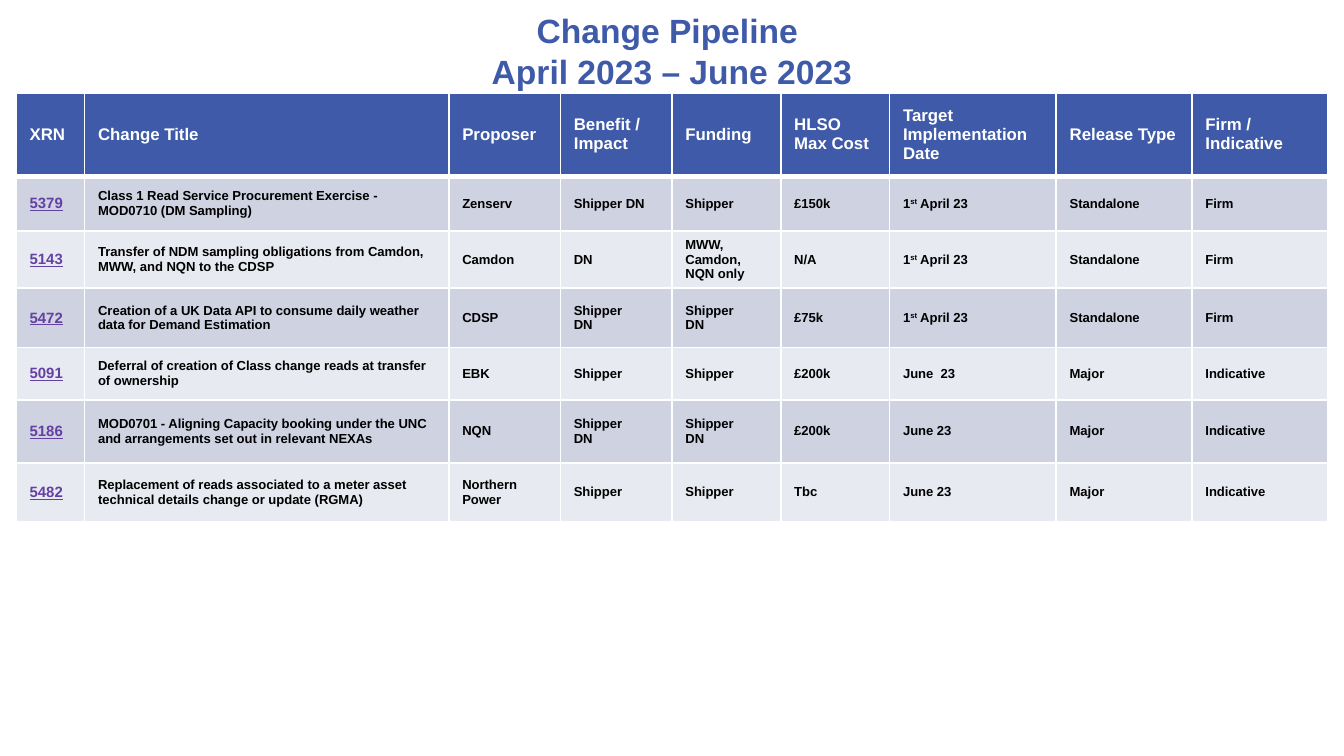
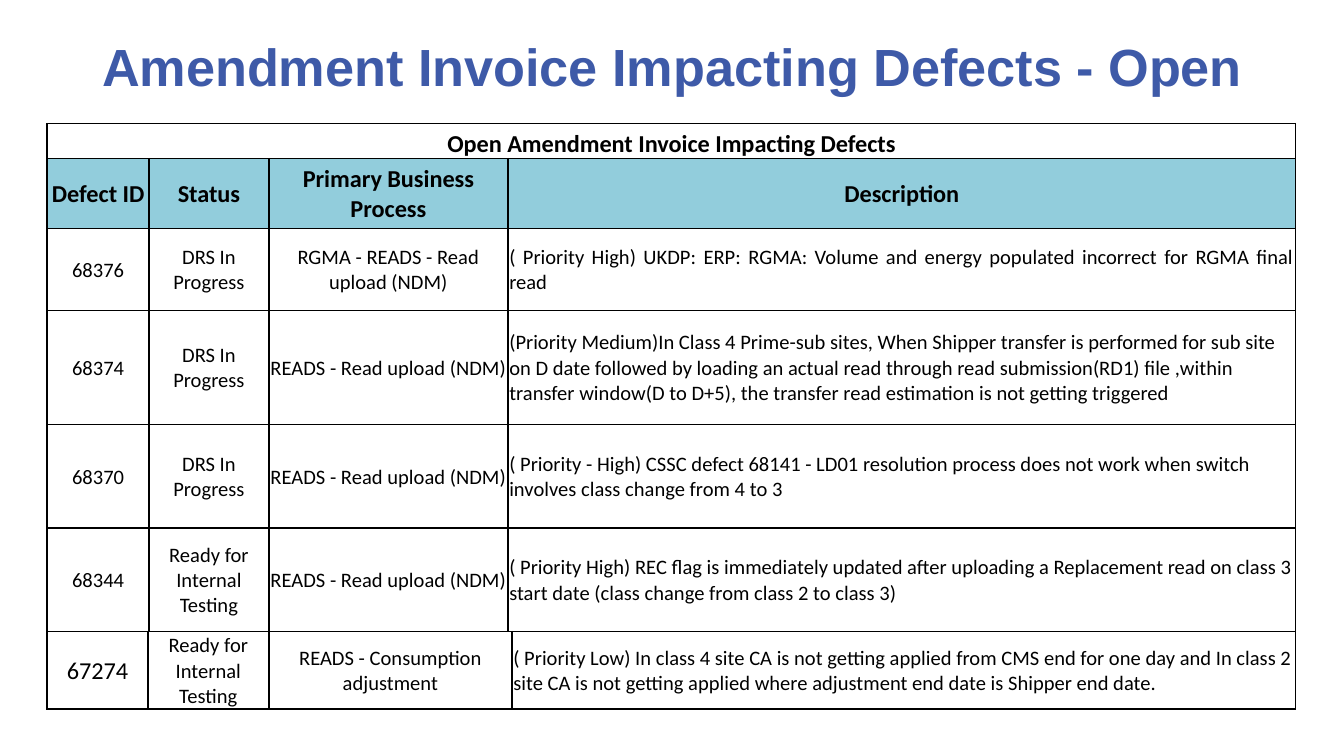
import pptx
import pptx.dml.color
import pptx.enum.text
import pptx.oxml.ns
import pptx.util
from lxml import etree

Inches = pptx.util.Inches
Pt = pptx.util.Pt
ALIGN = pptx.enum.text.PP_ALIGN
ANCHOR = pptx.enum.text.MSO_ANCHOR
qn = pptx.oxml.ns.qn

COLORS = {
    "blue": "3E5AA8",
    "white": "FFFFFF",
    "black": "000000",
    "link": "6440A3",
    "band_dark": "CED2E1",
    "band_light": "E8EAF1",
    "teal": "92CDDC",
}
TITLE_ONLY = 5

PIPELINE_COLUMNS = [0.51, 2.71, 0.83, 0.83, 0.81, 0.81, 1.24, 1.01, 1.01]
PIPELINE_HEIGHTS = [0.62, 0.41, 0.29, 0.44, 0.39, 0.47, 0.44]
# Text between carets is superscript.
PIPELINE = [
    ["XRN", "Change Title", "Proposer", "Benefit / Impact", "Funding",
     "HLSO\nMax Cost", "Target Implementation Date", "Release Type",
     "Firm / Indicative"],
    ["5379", "Class 1 Read Service Procurement Exercise - MOD0710 (DM Sampling)",
     "Zenserv", "Shipper DN", "Shipper", "£150k", "1^st^ April 23",
     "Standalone", "Firm"],
    ["5143", "Transfer of NDM sampling obligations from Camdon, MWW, and "
     "NQN to the CDSP",
     "Camdon", "DN", "MWW, Camdon, NQN only", "N/A", "1^st^ April 23",
     "Standalone", "Firm"],
    ["5472", "Creation of a UK Data API to consume daily weather data for "
     "Demand Estimation",
     "CDSP", "Shipper\nDN", "Shipper\nDN", "£75k", "1^st^ April 23",
     "Standalone", "Firm"],
    ["5091", "Deferral of creation of Class change reads at transfer of ownership",
     "EBK", "Shipper", "Shipper", "£200k", "June  23", "Major", "Indicative"],
    ["5186", "MOD0701 - Aligning Capacity booking under the UNC and "
     "arrangements set out in relevant NEXAs",
     "NQN", "Shipper\nDN", "Shipper\nDN", "£200k", "June 23", "Major",
     "Indicative"],
    ["5482", "Replacement of reads associated to a meter asset technical "
     "details change or update (RGMA)",
     "Northern Power", "Shipper", "Shipper", "Tbc", "June 23", "Major",
     "Indicative"],
]

DEFECT_COLUMNS = [0.76, 0.89, 1.78, 5.86]
DEFECT_HEIGHTS = [0.26, 0.52, 0.61, 0.85, 0.77, 0.77]
DEFECTS = [
    ["Open Amendment Invoice Impacting Defects", "", "", ""],
    ["Defect ID", "Status", "Primary Business Process", "Description"],
    ["68376", "DRS In Progress", "RGMA - READS - Read upload (NDM)",
     "( Priority High) UKDP: ERP: RGMA: Volume and energy populated "
     "incorrect for RGMA final read"],
    ["68374", "DRS In Progress", "READS - Read upload (NDM)",
     "(Priority Medium)In Class 4 Prime-sub sites, When Shipper transfer is "
     "performed for sub site on D date followed by loading an actual read "
     "through read submission(RD1) file ,within transfer window(D to D+5), "
     "the transfer read estimation is not getting triggered"],
    ["68370", "DRS In Progress", "READS - Read upload (NDM)",
     "( Priority - High) CSSC defect 68141 - LD01 resolution process does "
     "not work when switch involves class change from 4 to 3"],
    ["68344", "Ready for Internal Testing", "READS - Read upload (NDM)",
     "( Priority High) REC flag is immediately updated after uploading a "
     "Replacement read on class 3 start date (class change from class 2 to "
     "class 3)"],
]
LAST_COLUMNS = [0.75, 0.9, 1.81, 5.83]
LAST_DEFECT = [
    ["67274", "Ready for Internal Testing", "READS - Consumption adjustment",
     "( Priority Low) In class 4 site CA is not getting applied from CMS end "
     "for one day and In class 2 site CA is not getting applied where "
     "adjustment end date is Shipper end date."],
]


def rgb(name):
    return pptx.dml.color.RGBColor.from_string(COLORS[name])


def format_font(font, face, size, color, bold=False, underline=False):
    font.name = face
    font.size = Pt(size)
    font.color.rgb = rgb(color)
    font.bold = bold
    font.underline = underline


def add_titled_page(deck, text, height, size):
    page = deck.slides.add_slide(deck.slide_layouts[TITLE_ONLY])
    title = page.shapes.title
    title.left, title.top = Inches(0.5), Inches(0.14)
    title.width, title.height = Inches(9), Inches(height)
    frame = title.text_frame
    frame.text = text
    frame.auto_size = pptx.enum.text.MSO_AUTO_SIZE.NONE
    frame.vertical_anchor = ANCHOR.MIDDLE
    para = frame.paragraphs[0]
    para.alignment = ALIGN.CENTER
    for span in para.runs:
        format_font(span.font, "Arial", size, "blue", bold=True)
    return page


def add_grid(page, left, top, columns, heights, rows):
    """Add a table with its text and no built-in style effects."""
    table = page.shapes.add_table(
        len(rows), len(columns), Inches(left), Inches(top),
        Inches(sum(columns)), Inches(sum(heights))).table
    table.first_row = table.horz_banding = False
    for column, width in zip(table.columns, columns):
        column.width = Inches(width)
    for row, height, texts in zip(table.rows, heights, rows):
        row.height = Inches(height)
        for cell, text in zip(row.cells, texts):
            cell.text = text
            cell.vertical_anchor = ANCHOR.MIDDLE
    return table


def set_borders(cell, color, top=1, bottom=1):
    properties = cell._tc.get_or_add_tcPr()
    for side, width in (("L", 1), ("R", 1), ("T", top), ("B", bottom)):
        line = etree.SubElement(properties, qn(f"a:ln{side}"), w=str(Pt(width)))
        fill = etree.SubElement(line, qn("a:solidFill"))
        etree.SubElement(fill, qn("a:srgbClr"), val=COLORS[color])


def set_fill(cell, color=None):
    if color:
        cell.fill.solid()
        cell.fill.fore_color.rgb = rgb(color)
    else:
        cell.fill.background()


def format_cell(cell, face, size, color, alignment, bold=False, underline=False):
    for para in cell.text_frame.paragraphs:
        para.alignment = alignment
        raise_marked_text(para)
        for span in para.runs:
            format_font(span.font, face, size, color, bold, underline)


def raise_marked_text(para):
    """Turn the text between carets into superscript runs."""
    pieces = para.text.split("^")
    if len(pieces) == 1:
        return
    para.text = ""
    for index, piece in enumerate(pieces):
        span = para.add_run()
        span.text = piece
        if index % 2:
            span._r.get_or_add_rPr().set("baseline", "30000")


def add_pipeline_table(page):
    table = add_grid(page, 0.12, 0.69, PIPELINE_COLUMNS, PIPELINE_HEIGHTS, PIPELINE)
    for r, row in enumerate(table.rows):
        for c, cell in enumerate(row.cells):
            set_borders(cell, "white", bottom=3 if r == 0 else 1)
            if r == 0:
                fill, size, color = "blue", 9, "white"
            else:
                fill = "band_dark" if r % 2 else "band_light"
                size, color = (7, "black") if c else (8, "link")
            set_fill(cell, fill)
            format_cell(cell, "Arial", size, color, ALIGN.LEFT, bold=True,
                        underline=color == "link")


def add_defect_table(page, top, columns, heights, rows, heading_rows=0):
    table = add_grid(page, 0.35, top, columns, heights, rows)
    for r, row in enumerate(table.rows):
        heading = r < heading_rows
        for c, cell in enumerate(row.cells):
            cell.margin_left = cell.margin_right = Inches(0.01)
            cell.margin_top, cell.margin_bottom = Inches(0.01), 0
            set_borders(cell, "black")
            set_fill(cell, "teal" if heading and r == 1 else None)
            description = c == len(columns) - 1 and not heading
            format_cell(cell, "Calibri", 13 if heading else 11, "black",
                        ALIGN.LEFT if description else ALIGN.CENTER, bold=heading)
    return table


def main():
    deck = pptx.Presentation()
    deck.slide_width = Inches(10)
    deck.slide_height = deck.slide_width * 9 // 16

    page = add_titled_page(deck, "Change Pipeline \vApril 2023 – June 2023", 0.47, 18)
    add_pipeline_table(page)

    page = add_titled_page(deck, "Amendment Invoice Impacting Defects - Open", 0.7, 28)
    table = add_defect_table(page, 0.92, DEFECT_COLUMNS, DEFECT_HEIGHTS, DEFECTS,
                             heading_rows=2)
    caption = table.cell(0, 0)
    caption.merge(table.cell(0, len(DEFECT_COLUMNS) - 1))
    caption.vertical_anchor = ANCHOR.BOTTOM
    table.cell(2, 3).text_frame.paragraphs[0].alignment = ALIGN.JUSTIFY

    last = add_defect_table(page, 4.7, LAST_COLUMNS, [0.46], LAST_DEFECT)
    format_cell(last.cell(0, 0), "Calibri", 13, "black", ALIGN.CENTER)

    deck.save("out.pptx")


if __name__ == "__main__":
    main()
